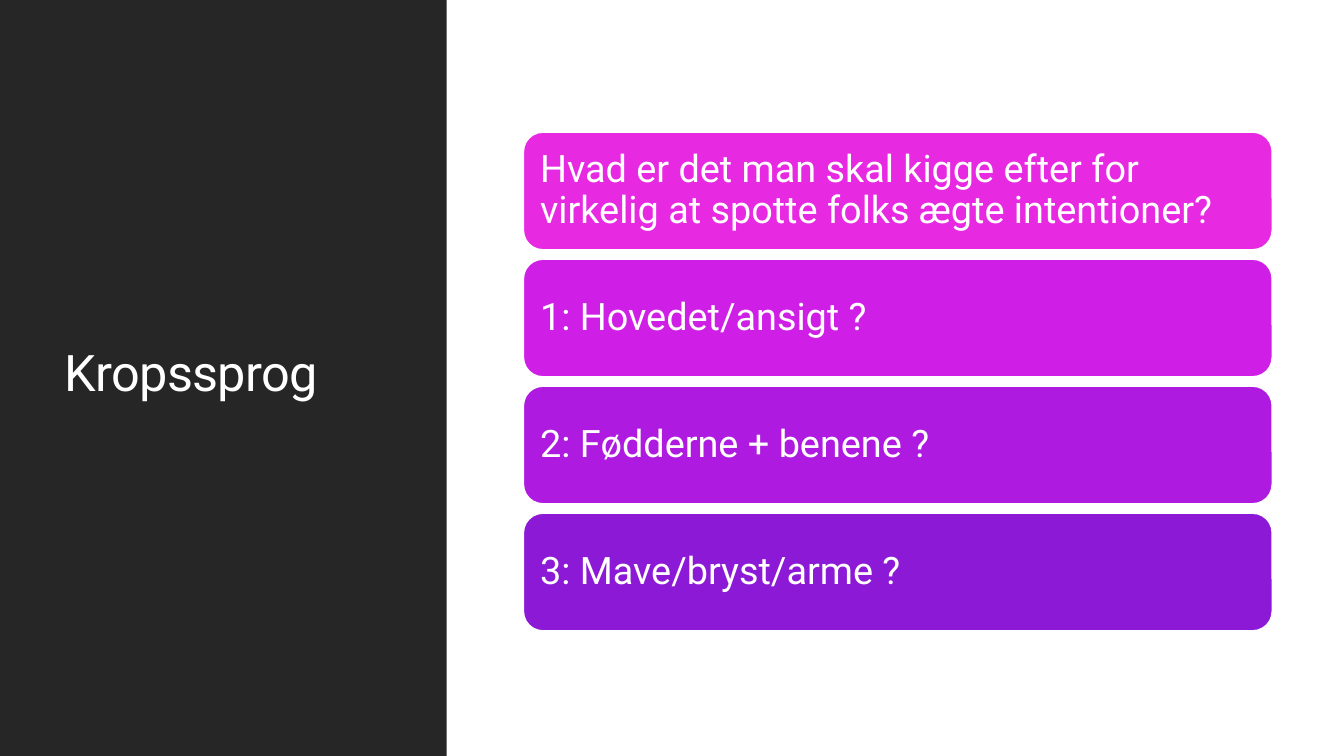
import pptx
import pptx.util
import pptx.dml.color
import pptx.enum.shapes
import pptx.enum.text

WIDTH, HEIGHT = 13.33, 7.5
FONT = "Roboto"
COLORS = {"panel": "262626", "white": "FFFFFF"}
CARDS = [
    ("Hvad er det man skal kigge efter for virkelig at spotte folks ægte intentioner?", "E729E2"),
    ("1: Hovedet/ansigt ?", "CF1FE6"),
    ("2: Fødderne + benene ?", "AE1ADF"),
    ("3: Mave/bryst/arme ?", "8C19D5"),
]


def rgb(value):
    """Return the colour object for a hex string."""
    return pptx.dml.color.RGBColor.from_string(value)


def add_block(slide, kind, box, fill):
    """Add a flat filled shape without a line or shadow."""
    sp = slide.shapes.add_shape(kind, *(pptx.util.Inches(v) for v in box))
    sp.shadow.inherit = False
    sp.fill.solid()
    sp.fill.fore_color.rgb = rgb(fill)
    sp.line.fill.background()
    return sp


def format_text(sp, text, size):
    """Set left-aligned, vertically centred white text."""
    tf = sp.text_frame
    tf.text = text
    tf.word_wrap = True
    tf.auto_size = pptx.enum.text.MSO_AUTO_SIZE.NONE
    tf.vertical_anchor = pptx.enum.text.MSO_ANCHOR.MIDDLE
    p = tf.paragraphs[0]
    p.alignment = pptx.enum.text.PP_ALIGN.LEFT
    p.line_spacing = 0.9
    p.font.name = FONT
    p.font.size = pptx.util.Pt(size)
    p.font.color.rgb = rgb(COLORS["white"])
    return tf


def add_title_panel(slide, left, top, width, height):
    """Draw the dark side panel and place the title on it."""
    panel = add_block(slide, pptx.enum.shapes.MSO_SHAPE.RECTANGLE,
                      (left, top, width, height), COLORS["panel"])
    title = slide.shapes.title
    title._element.addprevious(panel._element)
    title.left = pptx.util.Inches(left + 0.122 * width)
    title.top = pptx.util.Inches(top + 0.076 * height)
    title.width = pptx.util.Inches(0.76 * width)
    title.height = pptx.util.Inches(0.841 * height)
    tf = format_text(title, "Kropssprog", 36)
    tf.paragraphs[0].runs[0].font._element.set("spc", "-50")


def add_cards(slide, left, top, width, height, gap):
    """Stack equal rounded cards in the given box."""
    card_height = (height - gap * (len(CARDS) - 1)) / len(CARDS)
    for i, (text, fill) in enumerate(CARDS):
        box = (left, top + i * (card_height + gap), width, card_height)
        sp = add_block(slide, pptx.enum.shapes.MSO_SHAPE.ROUNDED_RECTANGLE, box, fill)
        sp.line.color.rgb = rgb(COLORS["white"])
        sp.line.width = pptx.util.Pt(1.25)
        tf = format_text(sp, text, 27)
        tf.margin_left = tf.margin_right = pptx.util.Inches(0.11)
        tf.margin_top = tf.margin_bottom = pptx.util.Inches(0.11)


def main():
    """Build and save the slide."""
    prs = pptx.Presentation()
    prs.slide_width = pptx.util.Inches(WIDTH)
    prs.slide_height = pptx.util.Inches(HEIGHT)
    slide = prs.slides.add_slide(prs.slide_layouts[5])
    slide.background.fill.solid()
    slide.background.fill.fore_color.rgb = rgb(COLORS["white"])
    add_title_panel(slide, 0, 0, 4.43, HEIGHT)
    add_cards(slide, 5.19, 1.31, 7.43, 4.95, 0.09)
    prs.save("out.pptx")


if __name__ == "__main__":
    main()
